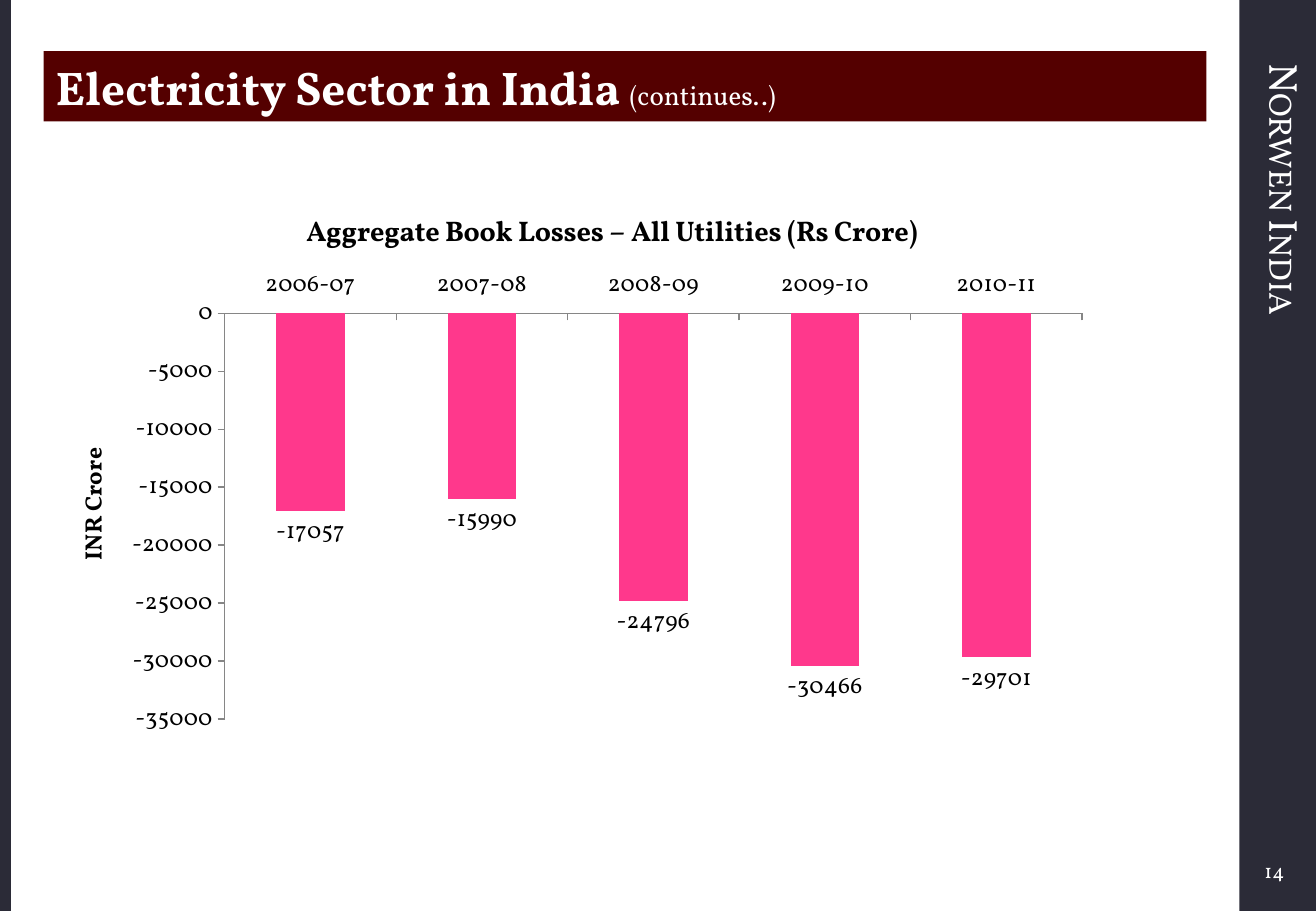
from lxml import etree
from pptx import Presentation
from pptx import util as u
from pptx.chart.data import CategoryChartData
from pptx.dml.color import RGBColor
from pptx.enum import chart as charts, shapes, text
from pptx.oxml import parse_xml
from pptx.oxml.ns import nsdecls, qn

FONT = "Vollkorn"
WHITE = RGBColor(0xFF, 0xFF, 0xFF)
BLACK = RGBColor(0, 0, 0)
NAVY = RGBColor(0x2B, 0x2B, 0x37)
MAROON = RGBColor(0x54, 0, 0)
PINK = RGBColor(0xFF, 0x38, 0x8C)
GREY = RGBColor(0x86, 0x86, 0x86)

WIDTH, HEIGHT = 27.51, 19.05
SIDEBAR_LEFT = 25.91
CHART_TITLE = "Aggregate Book Losses – All Utilities (Rs Crore)"
LOSSES = {"2006-07": -17057, "2007-08": -15990, "2008-09": -24796,
          "2009-10": -30466, "2010-11": -29701}


def set_font(font, size, color, bold=False):
    font.name, font.size, font.bold = FONT, u.Pt(size), bold
    font.color.rgb = color


def add_band(slide, left, width):
    shape = slide.shapes.add_shape(shapes.MSO_SHAPE.RECTANGLE,
                                   u.Cm(left), 0, u.Cm(width), u.Cm(HEIGHT))
    shape.shadow.inherit = False
    shape.fill.solid()
    shape.fill.fore_color.rgb = NAVY
    shape.line.fill.background()


def add_label(slide, words, box, size):
    shape = slide.shapes.add_textbox(*map(u.Cm, box))
    frame = shape.text_frame
    frame.word_wrap = True
    frame.text = words
    set_font(frame.paragraphs[0].runs[0].font, size, WHITE)
    return frame


def set_title(slide):
    title = slide.shapes.title
    title.left, title.top, title.width, title.height = map(
        u.Cm, (0.91, 1.07, 24.31, 1.47))
    title.fill.solid()
    title.fill.fore_color.rgb = MAROON
    frame = title.text_frame
    frame.auto_size = text.MSO_AUTO_SIZE.NONE
    frame.vertical_anchor = text.MSO_ANCHOR.MIDDLE
    paragraph = frame.paragraphs[0]
    paragraph.alignment = text.PP_ALIGN.LEFT
    for words, size, bold in (("Electricity Sector in India ", 28, True),
                              ("(continues..)", 16, False)):
        run = paragraph.add_run()
        run.text = words
        set_font(run.font, size, WHITE, bold)


def manual_layout(x, y, size=None):
    """Return a chart layout with positions as fractions of the chart."""
    values = [("xMode", "edge"), ("yMode", "edge"), ("x", x), ("y", y)]
    if size:
        values.insert(0, ("layoutTarget", "inner"))
        values += [("w", size[0]), ("h", size[1])]
    layout = parse_xml(f"<c:layout {nsdecls('c')}/>")
    manual = etree.SubElement(layout, qn("c:manualLayout"))
    for name, value in values:
        etree.SubElement(manual, qn(f"c:{name}")).set("val", str(value))
    return layout


def set_chart_title(title, words, size, x, y):
    title.text_frame.text = words
    set_font(title.text_frame.paragraphs[0].runs[0].font, size, BLACK, True)
    element = title._element
    for layout in element.findall(qn("c:layout")):
        element.remove(layout)
    element.find(qn("c:tx")).addnext(manual_layout(x, y))


def format_axis(axis):
    axis.has_major_gridlines = False
    axis.major_tick_mark = charts.XL_TICK_MARK.OUTSIDE
    axis.minor_tick_mark = charts.XL_TICK_MARK.NONE
    axis.format.line.color.rgb = GREY
    axis.format.line.width = u.Pt(0.75)
    set_font(axis.tick_labels.font, 14, BLACK)


def add_losses_chart(slide):
    data = CategoryChartData(number_format="General")
    data.categories = list(LOSSES)
    data.add_series(CHART_TITLE, list(LOSSES.values()))
    chart = slide.shapes.add_chart(
        charts.XL_CHART_TYPE.COLUMN_CLUSTERED,
        u.Cm(1.27), u.Cm(3.81), u.Cm(22.86), u.Cm(12.7), data).chart
    set_font(chart.font, 14, BLACK)
    chart.has_legend = False
    chart.has_title = True
    set_chart_title(chart.chart_title, CHART_TITLE, 16.8, 0.22, 0.04)

    # Axes
    format_axis(chart.category_axis)
    chart.category_axis.tick_label_position = charts.XL_TICK_LABEL_POSITION.HIGH
    value_axis = chart.value_axis
    format_axis(value_axis)
    value_axis.minimum_scale, value_axis.maximum_scale = -35000, 0
    value_axis.major_unit = 5000
    set_chart_title(value_axis.axis_title, "INR Crore", 14, 0.01, 0.43)
    body = value_axis.axis_title._element.find(".//" + qn("a:bodyPr"))
    body.set("rot", "-5400000")
    body.set("vert", "horz")

    # Plot area
    area = chart._chartSpace.chart.plotArea
    for layout in area.findall(qn("c:layout")):
        area.remove(layout)
    area.insert(0, manual_layout(0.15, 0.216, (0.784, 0.668)))

    # Columns and their values
    plot = chart.plots[0]
    plot.gap_width = 150
    plot.vary_by_categories = False
    series = plot.series[0]
    series.invert_if_negative = False
    series.format.fill.solid()
    series.format.fill.fore_color.rgb = PINK
    labels = series.data_labels
    labels.show_value = True
    labels.position = charts.XL_LABEL_POSITION.OUTSIDE_END
    set_font(labels.font, 14, BLACK)


def main():
    presentation = Presentation()
    presentation.slide_width, presentation.slide_height = u.Cm(WIDTH), u.Cm(HEIGHT)
    slide = presentation.slides.add_slide(presentation.slide_layouts[5])

    # Side bands
    add_band(slide, SIDEBAR_LEFT, WIDTH - SIDEBAR_LEFT)
    add_band(slide, 0, 0.23)

    # Sidebar name and page number
    name = add_label(slide, "Norwen India",
                     (SIDEBAR_LEFT, 1.07, WIDTH - SIDEBAR_LEFT, 16.31), 24)
    name._txBody.bodyPr.set("vert", "vert")
    name.paragraphs[0].runs[0].font._element.set("cap", "small")
    number = add_label(slide, "14", (24.13, 17.78, 2.97, 0.84), 12)
    number.vertical_anchor = text.MSO_ANCHOR.MIDDLE
    number.paragraphs[0].alignment = text.PP_ALIGN.RIGHT

    # Main content
    add_losses_chart(slide)
    set_title(slide)
    presentation.save("out.pptx")


if __name__ == "__main__":
    main()
